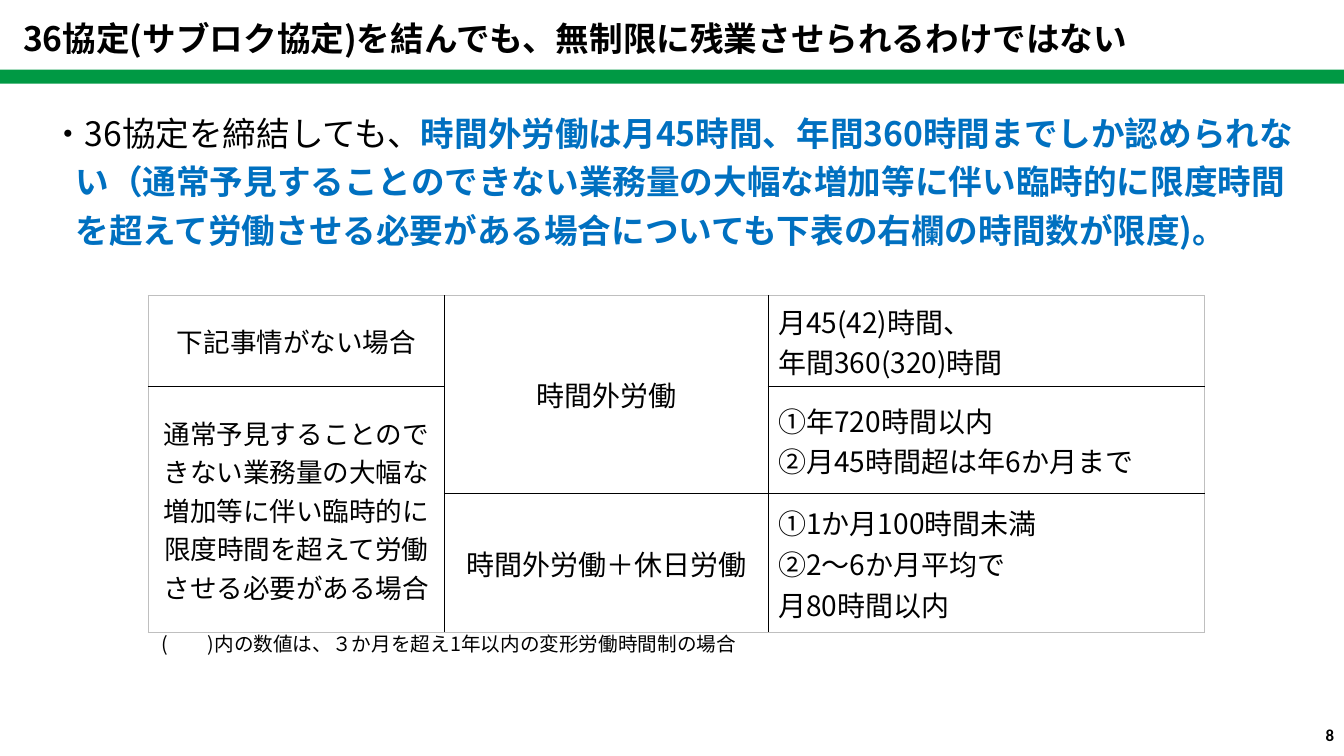
from dataclasses import dataclass

from lxml.etree import SubElement
from pptx import Presentation
from pptx.dml.color import RGBColor
from pptx.enum.shapes import MSO_SHAPE as Shape
from pptx.enum.text import MSO_ANCHOR as Anchor, PP_ALIGN as Align
from pptx.oxml.ns import qn
from pptx.util import Emu, Inches, Pt

WIDTH, HEIGHT = Inches(13.333), Inches(7.5)
JAPANESE, LATIN = "Noto Sans CJK JP", "Calibri"
BLACK, BLUE, GREEN, GRAY = "000000", "0070C0", "009944", "BFBFBF"


@dataclass(frozen=True)
class Box:
    left: float
    top: float
    width: float
    height: float


@dataclass(frozen=True)
class Piece:
    text: str
    size: float
    bold: bool = False
    color: str = BLACK
    font: str = JAPANESE


@dataclass(frozen=True)
class Label:
    box: Box
    pieces: tuple[Piece, ...]
    align: Align = Align.LEFT
    anchor: Anchor = Anchor.TOP
    spacing: float | Pt = 1.0
    hanging: float = 0


@dataclass(frozen=True)
class TableCell:
    row: int
    column: int
    text: str
    size: float = 20
    align: Align = Align.CENTER
    row_span: int = 1


LABELS = (
    Label(
        Box(11.3, 82.67, 53, 5.47),
        (Piece("(\u3000\u3000)内の数値は、３か月を超え1年以内の変形労働時間制の場合".replace("\u3000", "　"), 14),),
        spacing=Pt(18),
    ),
    Label(
        Box(0.98, 1.73, 88.6, 6.67),
        (Piece("36協定(サブロク協定)を結んでも、無制限に残業させられるわけではない", 24, True),),
    ),
    Label(
        Box(3.08, 13.2, 93.9, 19.87),
        (
            Piece("・36協定を締結しても、", 24),
            Piece(
                "時間外労働は月45時間、年間360時間までしか認められない"
                "（通常予見することのできない業務量の大幅な増加等に伴い臨時的に限度時間を超えて"
                "労働させる必要がある場合についても下表の右欄の時間数が限度)。",
                24, True, BLUE,
            ),
        ),
        spacing=1.2,
        hanging=1.8,
    ),
    Label(
        Box(76.65, 94.53, 23.35, 5.33),
        (Piece("8", 12, True, font=LATIN),),
        Align.RIGHT,
        Anchor.MIDDLE,
    ),
)

GREEN_BAR = Box(0, 9.2, 100, 1.87)
COLUMN_SHARES = (22.05, 24.08, 32.48)
ROW_SHARES = (12.1, 14.13, 18.4)
TABLE_BOX = Box(11.03, 39.07, sum(COLUMN_SHARES), sum(ROW_SHARES))
CELLS = (
    TableCell(0, 0, "下記事情がない場合", 19),
    TableCell(0, 1, "時間外労働", row_span=2),
    TableCell(0, 2, "月45(42)時間、\n年間360(320)時間", align=Align.LEFT),
    TableCell(
        1, 0,
        "通常予見することのできない業務量の大幅な増加等に伴い臨時的に"
        "限度時間を超えて労働させる必要がある場合",
        19, row_span=2,
    ),
    TableCell(1, 2, "①年720時間以内\n②月45時間超は年6か月まで", align=Align.LEFT),
    TableCell(2, 1, "時間外労働＋休日労働"),
    TableCell(2, 2, "①1か月100時間未満\n②2～6か月平均で\n月80時間以内", align=Align.LEFT),
)


def across(share: float) -> Emu:
    return Emu(round(WIDTH * share / 100))


def down(share: float) -> Emu:
    return Emu(round(HEIGHT * share / 100))


def place(box: Box) -> tuple[Emu, Emu, Emu, Emu]:
    return across(box.left), down(box.top), across(box.width), down(box.height)


def rgb(color: str) -> RGBColor:
    return RGBColor.from_string(color)


def format_run(run, piece: Piece) -> None:
    run.font.size = Pt(piece.size)
    run.font.bold = piece.bold
    run.font.color.rgb = rgb(piece.color)
    run.font.name = piece.font
    SubElement(run.font._element, qn("a:ea"), typeface=piece.font)


def draw_label(slide, label: Label) -> None:
    frame = slide.shapes.add_textbox(*place(label.box)).text_frame
    frame.word_wrap = True
    frame.vertical_anchor = label.anchor
    paragraph = frame.paragraphs[0]
    paragraph.alignment = label.align
    paragraph.line_spacing = label.spacing
    if label.hanging:
        properties = paragraph._p.get_or_add_pPr()
        properties.set("marL", str(across(label.hanging)))
        properties.set("indent", str(-across(label.hanging)))
    for piece in label.pieces:
        run = paragraph.add_run()
        run.text = piece.text
        format_run(run, piece)


def draw_bar(slide) -> None:
    bar = slide.shapes.add_shape(Shape.RECTANGLE, *place(GREEN_BAR))
    bar.shadow.inherit = False
    bar.fill.solid()
    bar.fill.fore_color.rgb = rgb(GREEN)
    bar.line.fill.background()


def draw_border(cell, side: str, outer: bool) -> None:
    width = Pt(0.5) if outer else Pt(1)
    line = SubElement(cell._tc.get_or_add_tcPr(), qn(f"a:{side}"), w=str(width))
    fill = SubElement(line, qn("a:solidFill"))
    SubElement(fill, qn("a:srgbClr"), val=GRAY if outer else BLACK)


def draw_table(slide) -> None:
    rows, columns = len(ROW_SHARES), len(COLUMN_SHARES)
    table = slide.shapes.add_table(rows, columns, *place(TABLE_BOX)).table
    table.first_row = table.horz_banding = False
    for column, share in zip(table.columns, COLUMN_SHARES):
        column.width = across(share)
    for row, share in zip(table.rows, ROW_SHARES):
        row.height = down(share)
    for item in CELLS:
        cell = table.cell(item.row, item.column)
        last_row = item.row + item.row_span - 1
        if item.row_span > 1:
            cell.merge(table.cell(last_row, item.column))
        for covered_row in range(item.row, last_row + 1):
            covered = table.cell(covered_row, item.column)
            draw_border(covered, "lnL", item.column == 0)
            draw_border(covered, "lnR", item.column == columns - 1)
            if covered_row == item.row:
                draw_border(covered, "lnT", item.row == 0)
            draw_border(covered, "lnB", last_row == rows - 1)
            covered.fill.background()
        cell.vertical_anchor = Anchor.MIDDLE
        cell.text_frame.text = item.text
        for paragraph in cell.text_frame.paragraphs:
            paragraph.alignment = item.align
            for run in paragraph.runs:
                format_run(run, Piece(run.text, item.size))


def main() -> None:
    presentation = Presentation()
    presentation.slide_width, presentation.slide_height = WIDTH, HEIGHT
    slide = presentation.slides.add_slide(presentation.slide_layouts[6])
    draw_table(slide)
    draw_bar(slide)
    for label in LABELS:
        draw_label(slide, label)
    presentation.save("out.pptx")


if __name__ == "__main__":
    main()
